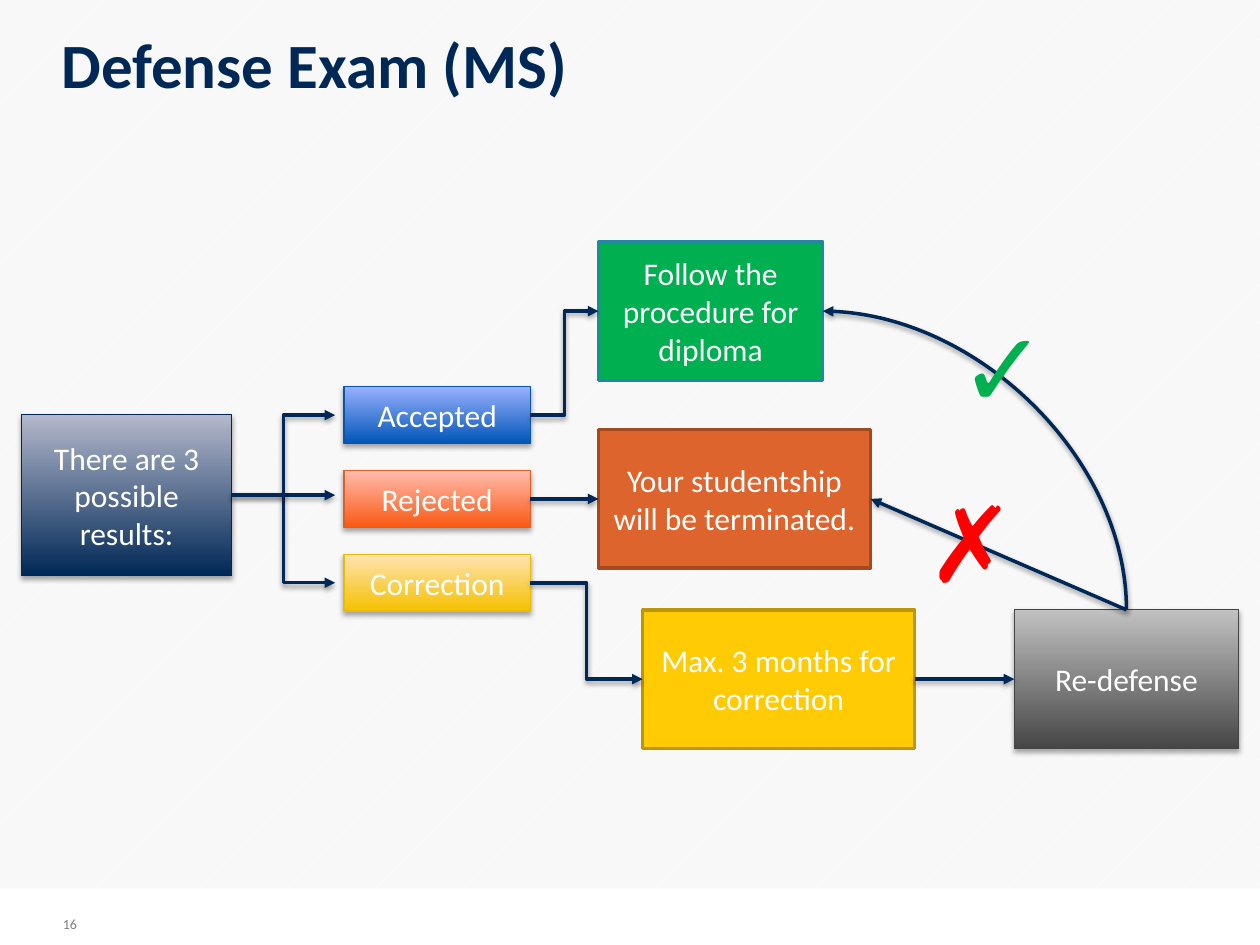
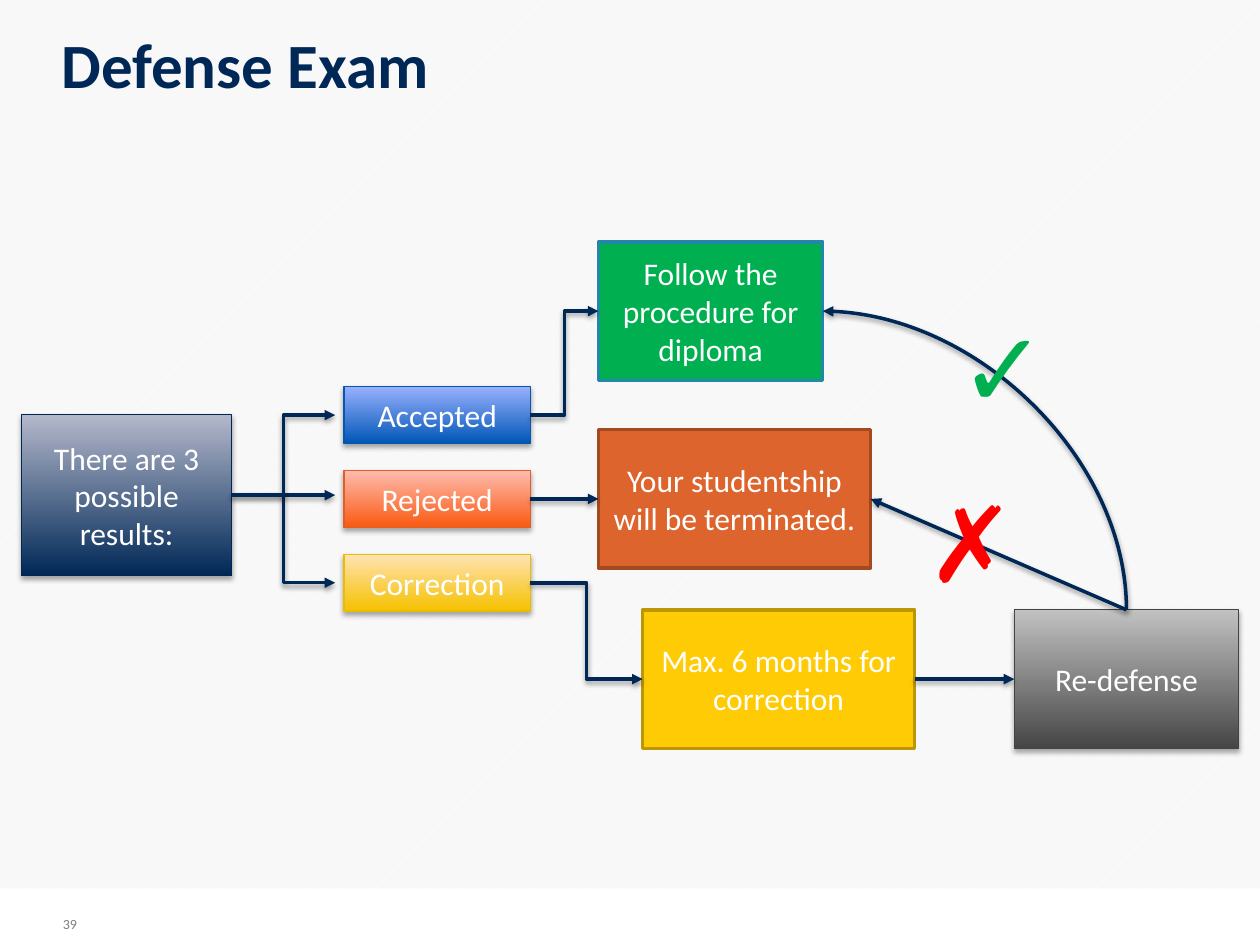
"""Build the two defense exam flow slides."""
from dataclasses import dataclass
from typing import Any, Optional

from lxml import etree
from pptx import Presentation
from pptx import util as u
from pptx.dml import color
from pptx.enum import dml, shapes, text
from pptx.oxml import ns

COLS, ROWS = 100, 75
CELL = u.Inches(0.1)
FONT = "Calibri"
NAVY, WHITE, GREY, GREEN, RED = "002856", "FFFFFF", "808080", "00B050", "FF0000"
TOP, LEFT, RIGHT = 0, 1, 3
STRAIGHT = shapes.MSO_CONNECTOR.STRAIGHT
ELBOW = shapes.MSO_CONNECTOR.ELBOW
CURVE = shapes.MSO_CONNECTOR.CURVE
ANCHOR, ALIGN = text.MSO_ANCHOR, text.PP_ALIGN


@dataclass(frozen=True)
class Box:
    """A flow step placed on the grid; a second fill makes a gradient."""
    key: str
    label: str
    col: float
    row: float
    cols: float
    rows: float
    fill: str
    line: str
    fill_top: Optional[str] = None


@dataclass(frozen=True)
class Link:
    """An arrow between two steps."""
    start: str
    end: str
    kind: Any = STRAIGHT
    start_side: int = RIGHT
    end_side: int = LEFT


@dataclass(frozen=True)
class Mark:
    """A large symbol set on an arrow."""
    symbol: str
    col: float
    row: float
    cols: float
    fill: str


@dataclass(frozen=True)
class Exam:
    """What differs from slide to slide."""
    title: str
    number: str
    months: int


RESULTS = [
    ("Accepted", "0056B7", "98B0FE", "0955AA"),
    ("Rejected", "F95A12", "FFBBAE", "DD6028"),
    ("Correction", "F5C100", "FFE3B3", "ECBB03"),
]
BOXES = [
    Box("intro", "There are 3 possible results:", 1.7, 32.9, 16.7, 12.8, NAVY, "002754", "B4B8CB"),
    *[Box(name, name, 27.3, 30.7 + 6.65 * i, 14.8, 4.5, low, line, high)
      for i, (name, low, high, line) in enumerate(RESULTS)],
    Box("diploma", "Follow the procedure for diploma", 47.5, 19.2, 17.8, 11, GREEN, "2387A8"),
    Box("ended", "Your studentship will be terminated.", 47.5, 34.1, 21.6, 11, "DE642D", "A44A21"),
    Box("fix", "Max. {months} months for correction", 51, 48.4, 21.6, 11, "FFCB05", "BD9604"),
    Box("again", "Re-defense", 80.5, 48.4, 17.8, 11, "464646", "444444", "C1C1C1"),
]
LINKS = [
    Link("Accepted", "diploma", ELBOW),
    Link("Rejected", "ended"),
    Link("Correction", "fix", ELBOW),
    Link("fix", "again"),
    Link("again", "ended", STRAIGHT, TOP, RIGHT),
    Link("again", "diploma", CURVE, TOP, RIGHT),
]
MARKS = [Mark("✗", 72.6, 37.4, 8.4, RED), Mark("✓", 75.2, 23.5, 9.8, GREEN)]
EXAMS = [Exam("Defense Exam (MS)", "16", 3), Exam("Defense Exam", "39", 6)]


def rgb(value: str) -> color.RGBColor:
    """Turn a hex string into a colour."""
    return color.RGBColor.from_string(value)


def grid(*cells: float) -> list[int]:
    """Turn grid counts into lengths."""
    return [u.Emu(round(n * CELL)) for n in cells]


def write(s: Any, words: str, *, size: float, fill: str, bold: bool = False,
          align: Any = ALIGN.LEFT, anchor: Any = ANCHOR.TOP,
          spacing: Optional[float] = None, wrap: bool = True) -> None:
    """Put formatted text in a shape."""
    tf = s.text_frame
    tf.word_wrap, tf.vertical_anchor = wrap, anchor
    p = tf.paragraphs[0]
    p.alignment, p.line_spacing = align, spacing
    r = p.add_run()
    r.text = words
    r.font.name, r.font.size, r.font.bold = FONT, u.Pt(size), bold
    r.font.color.rgb = rgb(fill)


def add_shadow(s: Any, alpha: int, dist: float) -> None:
    """Give a shape or connector a soft shadow below it."""
    effects = etree.SubElement(s.element.spPr, ns.qn("a:effectLst"))
    outer = etree.SubElement(effects, ns.qn("a:outerShdw"), blurRad=str(u.Pt(3.1)),
                             dist=str(u.Pt(dist)), dir="5400000", rotWithShape="0")
    black = etree.SubElement(outer, ns.qn("a:srgbClr"), val="000000")
    etree.SubElement(black, ns.qn("a:alpha"), val=str(alpha * 1000))


def add_box(slide: Any, box: Box, months: int) -> Any:
    """Draw one flow step."""
    s = slide.shapes.add_shape(shapes.MSO_SHAPE.RECTANGLE,
                               *grid(box.col, box.row, box.cols, box.rows))
    if box.fill_top:
        s.fill.gradient()
        s.fill.gradient_angle = 90
        for stop, at, value in zip(s.fill.gradient_stops, (0, 1), (box.fill, box.fill_top)):
            stop.position, stop.color.rgb = at, rgb(value)
    else:
        s.fill.solid()
        s.fill.fore_color.rgb = rgb(box.fill)
    s.line.color.rgb = rgb(box.line)
    s.line.width = u.Pt(0.75 if box.fill_top else 2)
    if box.fill_top:
        add_shadow(s, 35, 1.8)
    else:
        s.shadow.inherit = False
    write(s, box.label.format(months=months), size=18, fill=WHITE,
          align=ALIGN.CENTER, anchor=ANCHOR.MIDDLE)
    return s


def add_arrow(slide: Any, kind: Any, ends: list[int]) -> Any:
    """Draw a navy arrow between two points."""
    s = slide.shapes.add_connector(kind, *ends)
    s.line.color.rgb, s.line.width = rgb(NAVY), u.Pt(2)
    etree.SubElement(s.element.spPr.find(ns.qn("a:ln")), ns.qn("a:tailEnd"), type="triangle")
    add_shadow(s, 38, 1.6)
    return s


def turn_to_arc(s: Any) -> None:
    """Make a curve that runs up and to the left a quarter arc."""
    mid_x, mid_y = s.left + s.width // 2, s.top + s.height // 2
    s.width, s.height = s.height, s.width
    s.left, s.top = mid_x - s.width // 2, mid_y - s.height // 2
    s.element.spPr.find(ns.qn("a:prstGeom")).set("prst", "curvedConnector2")
    xfrm = s.element.spPr.find(ns.qn("a:xfrm"))
    xfrm.set("rot", "16200000")
    xfrm.set("flipH", "0")
    xfrm.set("flipV", "1")


def add_fan(slide: Any, intro: Any) -> None:
    """Draw the three arrows that leave the first step."""
    first, *results = BOXES[:4]
    stem, tip = 22.5, 26.6
    middle = first.row + first.rows / 2
    add_arrow(slide, STRAIGHT, grid(stem, middle, tip, middle))
    for box in (results[-1], results[0]):
        s = add_arrow(slide, ELBOW, grid(first.col + first.cols, middle,
                                         tip, box.row + box.rows / 2))
        s.begin_connect(intro, RIGHT)


def add_link(slide: Any, link: Link, steps: dict[str, Any]) -> None:
    """Join two steps with an arrow."""
    s = add_arrow(slide, link.kind, [0, 0, 0, 0])
    s.begin_connect(steps[link.start], link.start_side)
    s.end_connect(steps[link.end], link.end_side)
    if link.kind == CURVE:
        turn_to_arc(s)


def add_frame(slide: Any, exam: Exam) -> None:
    """Draw the background, footer band, number and title."""
    fill = slide.background.fill
    fill.patterned()
    fill.pattern = dml.MSO_PATTERN.PERCENT_5
    fill.fore_color.rgb, fill.back_color.rgb = rgb(WHITE), rgb("F8F8F8")
    band = slide.shapes.add_shape(shapes.MSO_SHAPE.RECTANGLE, *grid(0, 70.5, COLS, 4.5))
    band.shadow.inherit = False
    band.fill.solid()
    band.fill.fore_color.rgb = rgb(WHITE)
    band.line.fill.background()
    number = slide.shapes.add_textbox(*grid(4, 71, 3.6, 3.5))
    write(number, exam.number, size=8, fill=GREY, anchor=ANCHOR.BOTTOM)
    title = slide.shapes.add_textbox(*grid(3.9, 2.7, 89.7, 10.9))
    write(title, exam.title, size=36, fill=NAVY, bold=True, spacing=0.8)


def add_exam(prs: Any, exam: Exam) -> None:
    """Add one slide with the whole flow."""
    slide = prs.slides.add_slide(prs.slide_layouts[6])
    add_frame(slide, exam)
    steps = {box.key: add_box(slide, box, exam.months) for box in BOXES}
    add_fan(slide, steps["intro"])
    for link in LINKS:
        add_link(slide, link, steps)
    for mark in MARKS:
        s = slide.shapes.add_textbox(*grid(mark.col, mark.row, mark.cols, 14.2))
        write(s, mark.symbol, size=60, fill=mark.fill, wrap=False)
        s.text_frame.auto_size = text.MSO_AUTO_SIZE.SHAPE_TO_FIT_TEXT


def main() -> None:
    """Build and save the presentation."""
    prs = Presentation()
    prs.slide_width, prs.slide_height = grid(COLS, ROWS)
    for exam in EXAMS:
        add_exam(prs, exam)
    prs.save("out.pptx")


if __name__ == "__main__":
    main()
